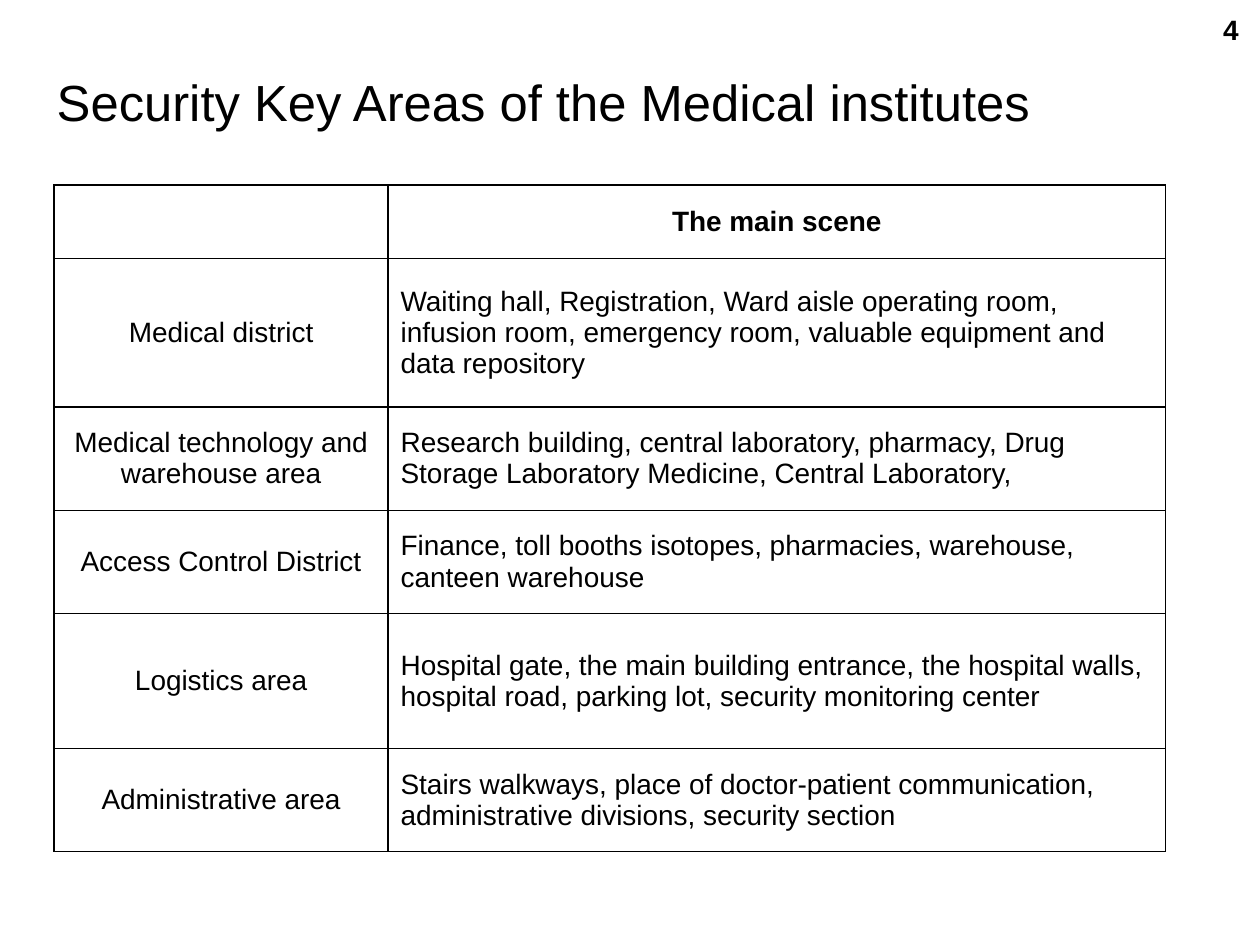
from pptx import Presentation
from pptx.dml.color import RGBColor
from pptx.enum.text import MSO_ANCHOR as Anchor, PP_ALIGN as Align
from pptx.oxml import parse_xml
from pptx.oxml.ns import nsdecls
from pptx.util import Inches, Pt

BLACK = "000000"
COLS = [2.65, 6.17]
ROWS = [
    (0.58, "", "The main scene"),
    (1.18, "Medical district",
     "Waiting hall, Registration, Ward aisle operating room, infusion room, "
     "emergency room, valuable equipment and data repository"),
    (0.82, "Medical technology and warehouse area",
     "Research building, central laboratory, pharmacy, Drug Storage "
     "Laboratory Medicine, Central Laboratory,"),
    (0.82, "Access Control District",
     "Finance, toll booths isotopes, pharmacies, warehouse, canteen warehouse"),
    (1.07, "Logistics area",
     "Hospital gate, the main building entrance, the hospital walls, "
     "hospital road, parking lot, security monitoring center"),
    (0.82, "Administrative area",
     "Stairs walkways, place of doctor-patient communication, "
     "administrative divisions, security section"),
]


def color(code):
    return RGBColor.from_string(code)


def write(frame, text, size, align=Align.LEFT, bold=False):
    frame.word_wrap = True
    frame.text = text
    para = frame.paragraphs[0]
    para.alignment = align
    font = para.font
    font.name, font.size, font.bold = "Arial", Pt(size), bold
    font.color.rgb = color(BLACK)
    return para


def add_borders(cell, code, width):
    props = cell._tc.get_or_add_tcPr()
    for i, side in enumerate(("lnL", "lnR", "lnT", "lnB")):
        props.insert(i, parse_xml(
            f'<a:{side} {nsdecls("a")} w="{Pt(width)}"><a:solidFill>'
            f'<a:srgbClr val="{code}"/></a:solidFill></a:{side}>'))


def add_title(slide, left, top, width, height):
    title = slide.shapes.title
    title.left, title.top = Inches(left), Inches(top)
    title.width, title.height = Inches(width), Inches(height)
    title.text_frame.vertical_anchor = Anchor.MIDDLE
    para = write(title.text_frame,
                 "Security Key Areas of the Medical institutes", 29)
    para.line_spacing = 1.2


def add_number(slide, left, top, width, height):
    box = slide.shapes.add_textbox(
        Inches(left), Inches(top), Inches(width), Inches(height))
    write(box.text_frame, "4", 16, Align.RIGHT, True)


def add_areas(slide, left, top):
    height = sum(row[0] for row in ROWS)
    table = slide.shapes.add_table(
        len(ROWS), len(COLS), Inches(left), Inches(top),
        Inches(sum(COLS)), Inches(height)).table
    table.first_row = table.horz_banding = False
    for col, width in zip(table.columns, COLS):
        col.width = Inches(width)
    for r, (height, *texts) in enumerate(ROWS):
        table.rows[r].height = Inches(height)
        for c, text in enumerate(texts):
            cell = table.cell(r, c)
            cell.fill.background()
            cell.vertical_anchor = Anchor.MIDDLE
            head = r == 0
            align = Align.CENTER if head or c == 0 else Align.LEFT
            write(cell.text_frame, text, 16, align, head)
            add_borders(cell, BLACK, 1)


def main():
    deck = Presentation()
    deck.slide_width, deck.slide_height = Inches(10), Inches(7.5)
    slide = deck.slides.add_slide(deck.slide_layouts[5])
    add_number(slide, 7.6, 0.05, 2.33, 0.52)
    add_title(slide, 0.35, 0.13, 9, 1.25)
    add_areas(slide, 0.43, 1.47)
    deck.save("out.pptx")


if __name__ == "__main__":
    main()
